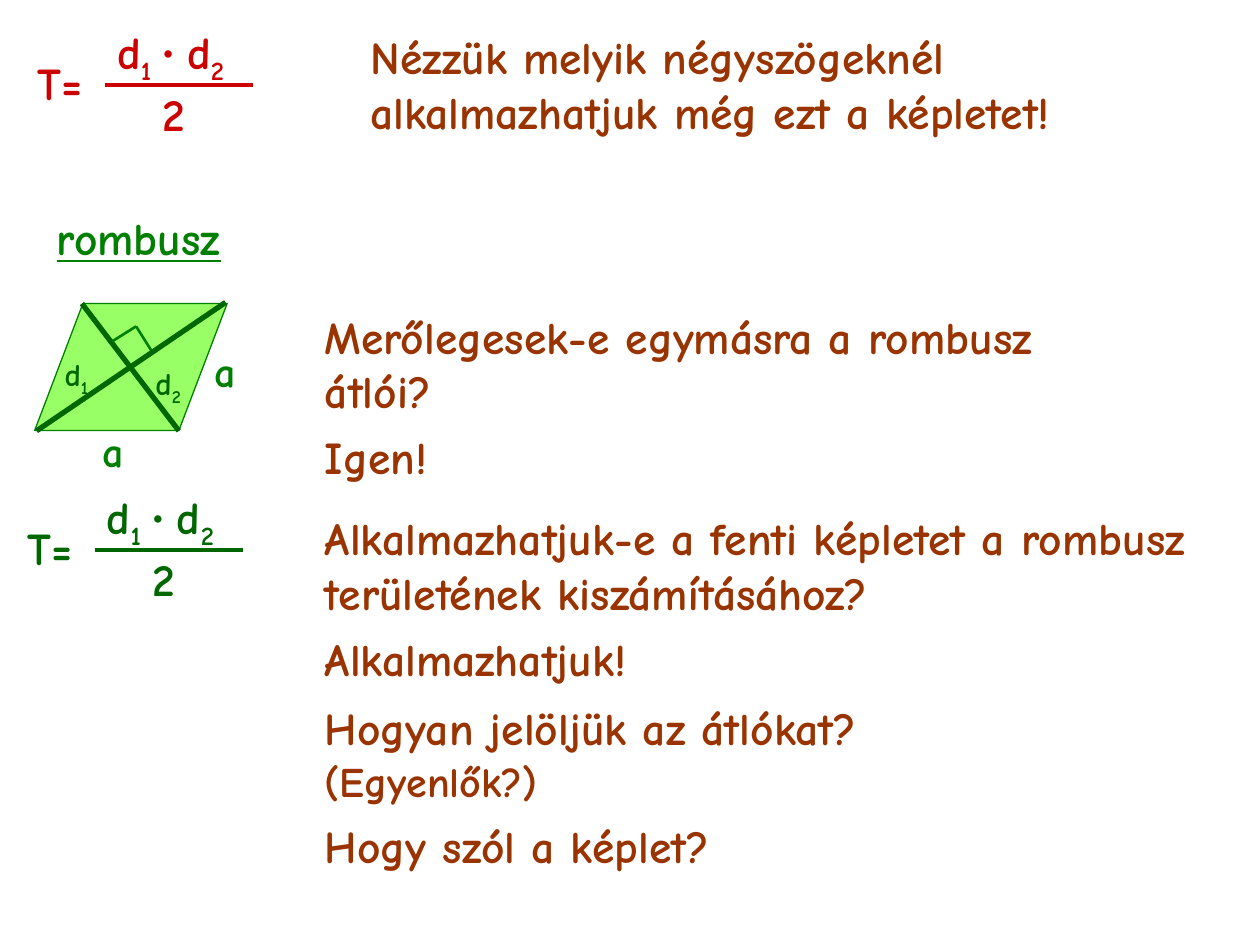
import pptx
import pptx.util
import pptx.dml.color
import pptx.enum.shapes
import pptx.enum.text
import pptx.oxml

Pt = pptx.util.Pt
ALIGN = pptx.enum.text.PP_ALIGN
BROWN, RED, GREEN, DARK_GREEN = "993300", "CC0000", "008000", "006600"


def color(hex_code):
    return pptx.dml.color.RGBColor.from_string(hex_code)


def put_text(box, lines, size, ink, align=ALIGN.LEFT, wrap=True):
    """Fill a box; each line is a list of pieces, and "_" opens a subscript."""
    frame = box.text_frame
    frame.word_wrap = wrap
    frame.auto_size = pptx.enum.text.MSO_AUTO_SIZE.NONE
    frame.vertical_anchor = pptx.enum.text.MSO_ANCHOR.TOP
    for number, pieces in enumerate(lines):
        paragraph = frame.add_paragraph() if number else frame.paragraphs[0]
        paragraph.alignment = align
        for piece in pieces:
            run = paragraph.add_run()
            run.text = piece.lstrip("_")
            run.font.name = "Times New Roman" if "·" in piece else "Comic Neue"
            run.font.size = Pt(size)
            run.font.bold = True
            run.font.color.rgb = color(ink)
            if piece.startswith("_"):
                run.font._element.set("baseline", "-25000")
    return frame


presentation = pptx.Presentation()
presentation.slide_width, presentation.slide_height = Pt(720), Pt(540)
slide = presentation.slides.add_slide(presentation.slide_layouts[5])
shapes = slide.shapes

# Task at the top
task = shapes.title
task.left, task.top, task.width, task.height = Pt(204.5), Pt(13), Pt(473), Pt(70.5)
put_text(task, [["Nézzük melyik négyszögeknél alkalmazhatjuk még ezt a képletet!"]], 26, BROWN)

# Questions and answers
questions = [
    (172.8, 456.5, ["Merőlegesek-e egymásra a rombusz átlói?"]),
    (241.9, 91, ["Igen!"]),
    (288, 521.3, ["Alkalmazhatjuk-e a fenti képletet a rombusz területének kiszámításához?"]),
    (357.1, 521.3, ["Alkalmazhatjuk!"]),
    (396.7, 521.3, ["Hogyan jelöljük az átlókat?", "(Egyenlők?)"]),
    (463.7, 541.4, ["Hogy szól a képlet?"]),
]
for top, width, lines in questions:
    question = shapes.add_textbox(Pt(178.6), Pt(top), Pt(width), Pt(38.2 * len(lines)))
    frame = put_text(question, [[line] for line in lines], 26, BROWN)
    for aside in frame.paragraphs[1:]:
        aside.runs[0].font.size = Pt(24)

# Name of the quadrilateral
heading = shapes.add_textbox(Pt(0), Pt(116.6), Pt(158.4), Pt(37.4))
frame = put_text(heading, [["rombusz"]], 26, GREEN, ALIGN.CENTER)
frame.paragraphs[0].runs[0].font.underline = True

# Rhombus
rhombus = shapes.add_shape(pptx.enum.shapes.MSO_SHAPE.PARALLELOGRAM,
                           Pt(19.8), Pt(173.4), Pt(110), Pt(72.6))
rhombus.adjustments[0] = 0.38
rhombus.shadow.inherit = False
rhombus.fill.solid()
rhombus.fill.fore_color.rgb = color("99FF66")
rhombus.line.color.rgb = color(GREEN)
rhombus.line.width = Pt(0.75)

# Diagonals, right-angle mark and the fraction bars of both formulas
formulas = [(8.6, 293.8, DARK_GREEN), (14.4, 28.1, RED)]
strokes = [
    (20.9, 246.2, 128.9, 172.8, DARK_GREEN, 3),
    (46.8, 173.5, 102.2, 246.2, DARK_GREEN, 3),
    (64.1, 195.1, 77.8, 186.5, GREEN, 1.5),
    (86.4, 200.2, 77.8, 186.5, GREEN, 1.5),
]
strokes += [(left + 45.4, top + 20.3, left + 130.4, top + 20.3, ink, 2.25)
            for left, top, ink in formulas]
for x1, y1, x2, y2, ink, weight in strokes:
    stroke = shapes.add_connector(pptx.enum.shapes.MSO_CONNECTOR.STRAIGHT,
                                  Pt(x1), Pt(y1), Pt(x2), Pt(y2))
    stroke.line.color.rgb = color(ink)
    stroke.line.width = Pt(weight)
    stroke._element.spPr.append(pptx.oxml.parse_xml(
        '<a:effectLst xmlns:a="http://schemas.openxmlformats.org/drawingml/2006/main"/>'))

# Side and diagonal labels
for left, top in [(45.4, 239.8), (109.4, 193.7)]:
    side = shapes.add_textbox(Pt(left), Pt(top), Pt(38.9), Pt(36))
    put_text(side, [["a"]], 24, GREEN, ALIGN.CENTER)
for left, top, index in [(27.4, 199.4, "_1"), (79.9, 204.5, "_2")]:
    diagonal = shapes.add_textbox(Pt(left), Pt(top), Pt(32.4), Pt(28.8))
    put_text(diagonal, [["d", index]], 18, DARK_GREEN, ALIGN.CENTER, wrap=False)

# Area formulas: left side, numerator, denominator
formula_parts = [
    (0, 0, 62.6, ["T="]),
    (45.4, -18, 113.8, ["d", "_1 ", "· ", "d", "_2"]),
    (71.3, 17.3, 33.8, ["2"]),
]
for left, top, ink in formulas:
    for dx, dy, width, pieces in formula_parts:
        part = shapes.add_textbox(Pt(left + dx), Pt(top + dy), Pt(width), Pt(38.2))
        put_text(part, [pieces], 26, ink)

presentation.save("out.pptx")
